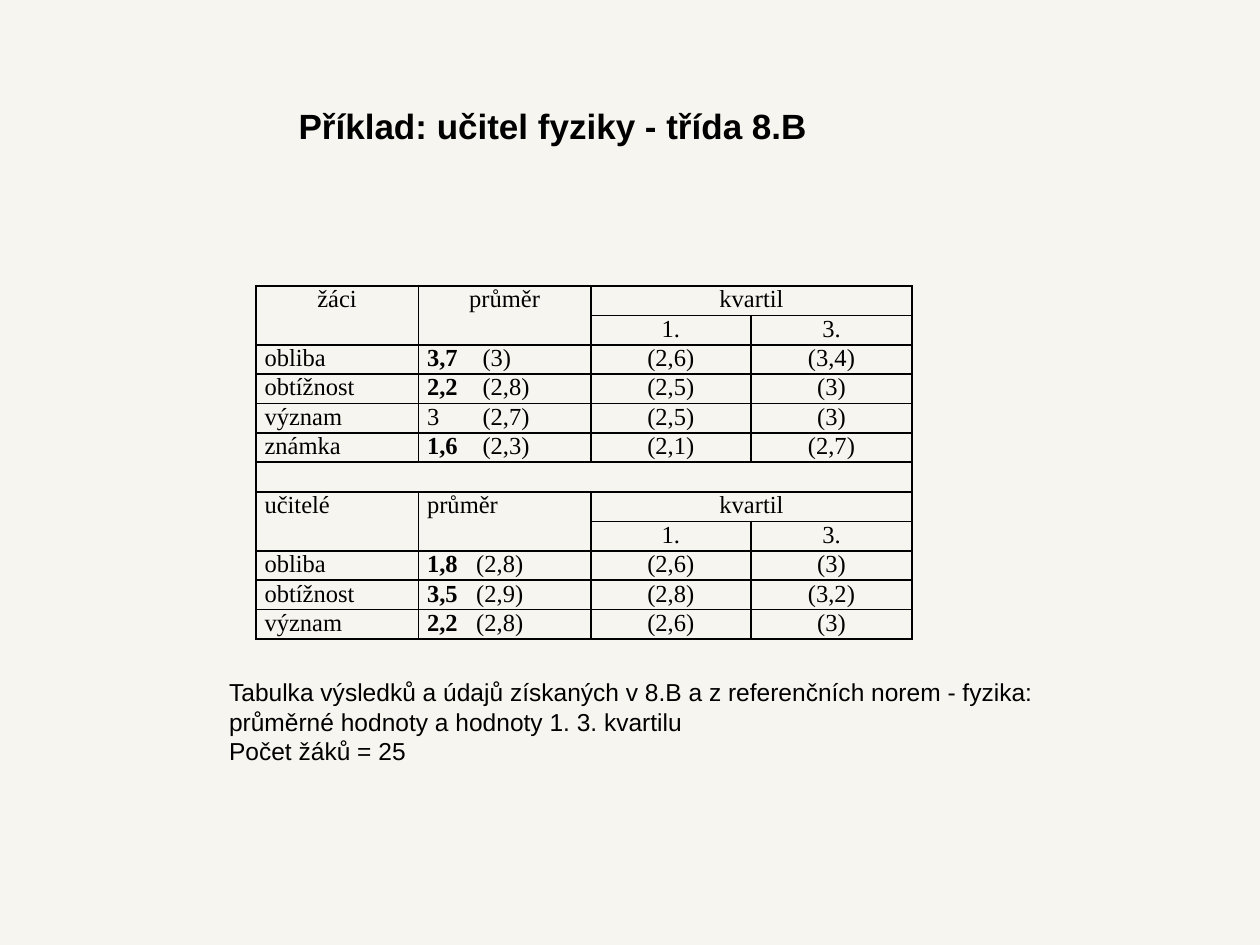
from pptx import Presentation
from pptx.dml.color import RGBColor as RGB
from pptx.enum.text import MSO_ANCHOR as Anchor, PP_ALIGN as Align
from pptx.oxml import parse_xml
from pptx.oxml.ns import nsdecls
from pptx.util import Inches as In, Pt

HUES = {"back": "F6F5EF", "ink": "000000"}
NS = nsdecls("a")


def put(frame, lines, font="Arial", size=14, bold=False, lead=False,
        align=Align.LEFT, indent=0, tab=0):
    """Write one paragraph per line; lead makes the part before a tab bold."""
    for i, line in enumerate(lines):
        para = frame.add_paragraph() if i else frame.paragraphs[0]
        para.alignment = align
        props = para._p.get_or_add_pPr()
        if indent:
            props.set("indent", str(In(indent)))
        if tab:
            props.append(parse_xml(
                f'<a:tabLst {NS}><a:tab pos="{In(tab)}" algn="l"/></a:tabLst>'))
        head, gap, rest = line.partition("\t")
        for text, heavy in ((head, bold or lead), (gap + rest, bold)):
            if text:
                run = para.add_run()
                run.text = text
                run.font.name, run.font.size = font, Pt(size)
                run.font.bold = heavy
                run.font.color.rgb = RGB.from_string(HUES["ink"])
        if not line:  # keeps an empty row as low as the others
            para._p.append(parse_xml(f'<a:endParaRPr {NS} sz="{size * 100}"/>'))


def frame_cell(cell):
    """Clear the fill and rule all four sides."""
    cell.fill.background()
    props = cell._tc.get_or_add_tcPr()
    for i, side in enumerate("LRTB"):
        props.insert(i, parse_xml(
            f'<a:ln{side} {NS} w="{Pt(1)}"><a:solidFill>'
            f'<a:srgbClr val="{HUES["ink"]}"/></a:solidFill></a:ln{side}>'))


deck = Presentation()
deck.slide_width, deck.slide_height = In(10), In(7.5)
slide = deck.slides.add_slide(deck.slide_layouts[5])
slide.background.fill.solid()
slide.background.fill.fore_color.rgb = RGB.from_string(HUES["back"])

# Title
title = slide.shapes.title
title.left, title.top, title.width, title.height = map(In, (2.27, 0.78, 4.34, 0.44))
title.text_frame.vertical_anchor = Anchor.MIDDLE
put(title.text_frame, ["Příklad: učitel fyziky - třída 8.B"], size=20, bold=True)

# Results: label, class mean, norm mean, first and third quartile
groups = [
    ("žáci", Align.CENTER, 0.44, [
        ("obliba", "3,7", "3", "2,6", "3,4"),
        ("obtížnost", "2,2", "2,8", "2,5", "3"),
        ("význam", "3", "2,7", "2,5", "3"),
        ("známka", "1,6", "2,3", "2,1", "2,7")]),
    ("učitelé", Align.JUSTIFY, 0.39, [
        ("obliba", "1,8", "2,8", "2,6", "3"),
        ("obtížnost", "3,5", "2,9", "2,8", "3,2"),
        ("význam", "2,2", "2,8", "2,6", "3")]),
]
cols = [1.29, 1.37, 1.27, 1.28]
rows, high = 12, 2.8
grid = slide.shapes.add_table(rows, len(cols), In(2.03), In(2.27),
                              In(sum(cols)), In(high)).table
grid.first_row = grid.horz_banding = False
for col, wide in zip(grid.columns, cols):
    col.width = In(wide)
for row in grid.rows:
    row.height = In(high / rows)

# Lay out the cell texts, then join the header cells
texts, looks, joins = [], [], []
for name, side, tab, data in groups:
    if texts:  # one blank row between the groups
        joins.append((len(texts), 0, len(texts), 3))
        texts.append([""] * 4)
        looks.append((side, 0, False))
    top = len(texts)
    joins += [(top, 0, top + 1, 0), (top, 1, top + 1, 1), (top, 2, top, 3)]
    texts += [[name, "průměr", "kvartil", ""], ["", "", "1.", "3."]]
    looks += [(side, 0, False)] * 2
    for label, mean, norm, low, peak in data:
        val, least, most = (float(s.replace(",", ".")) for s in (mean, low, peak))
        texts.append([label, f"{mean}\t({norm})", f"({low})", f"({peak})"])
        # A mean outside the quartiles is bold
        looks.append((Align.JUSTIFY, tab, not least <= val <= most))

for r, (line, (side, tab, lead)) in enumerate(zip(texts, looks)):
    for c, text in enumerate(line):
        cell = grid.cell(r, c)
        cell.margin_left = cell.margin_right = In(0.07)
        cell.margin_top = cell.margin_bottom = 0
        frame_cell(cell)
        put(cell.text_frame, [text], font="Times New Roman",
            align=side if c < 2 else Align.CENTER,
            tab=tab if c == 1 else 0, lead=lead and c == 1)
for r, c, end, last in joins:
    grid.cell(r, c).merge(grid.cell(end, last))

# Caption
note = slide.shapes.add_textbox(In(1.09), In(5.32), In(7.3), In(0.81)).text_frame
note.word_wrap = True
note.vertical_anchor = Anchor.MIDDLE
put(note, ["Tabulka výsledků a údajů získaných v 8.B a z referenčních norem - fyzika:",
           "průměrné hodnoty a hodnoty 1. 3. kvartilu",
           "Počet žáků = 25"], align=Align.JUSTIFY, indent=0.63)

deck.save("out.pptx")
